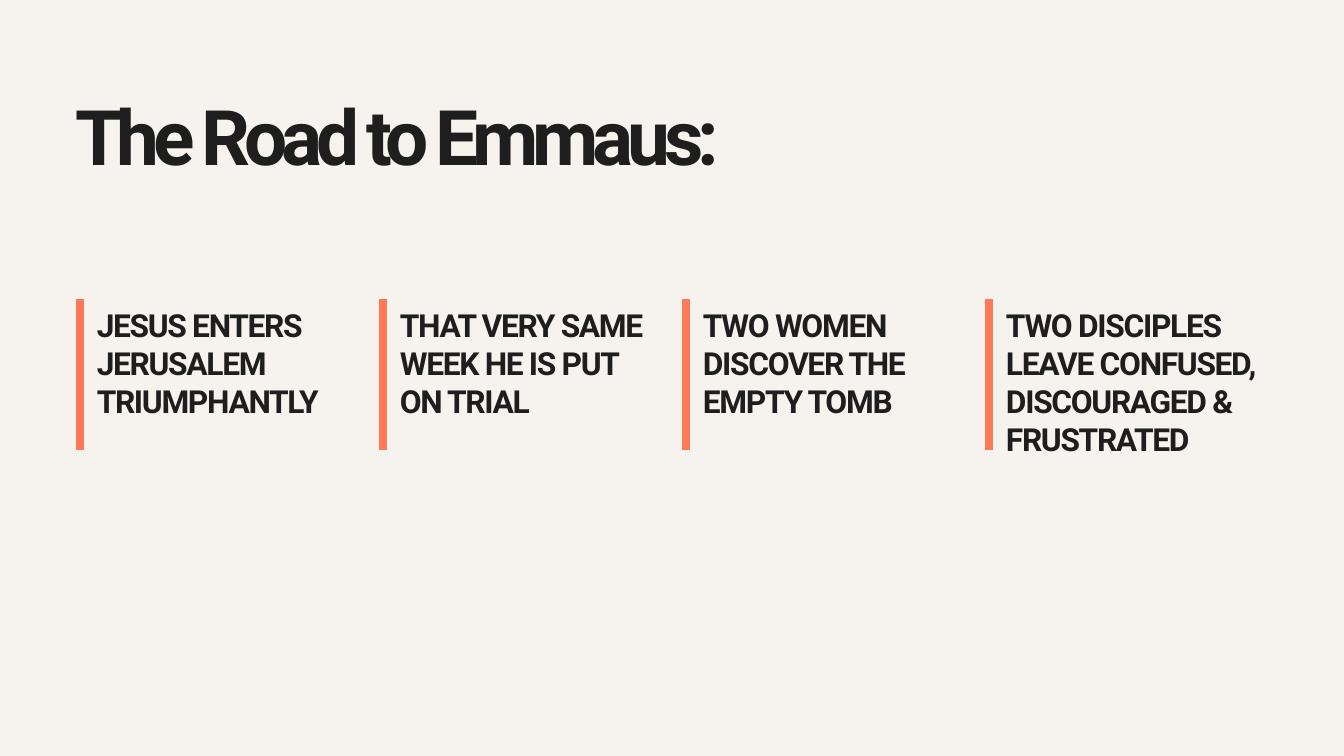
from lxml.etree import SubElement
from pptx import Presentation
from pptx.dml.color import RGBColor as RGB
from pptx.enum.shapes import MSO_CONNECTOR as Link
from pptx.enum.text import MSO_ANCHOR as Anchor, MSO_AUTO_SIZE as Fit, PP_ALIGN as Align
from pptx.oxml.ns import qn
from pptx.util import Inches, Pt

CREAM = RGB(0xF6, 0xF3, 0xEF)
CORAL = RGB(0xFE, 0x79, 0x58)
INK = RGB(0x1E, 0x1E, 0x1E)

LEFT, STEP = 1.19, 4.51
TOP, BASE = 4.45, 6.7
EVENTS = [
    "JESUS ENTERS JERUSALEM TRIUMPHANTLY",
    "THAT VERY SAME WEEK HE IS PUT ON TRIAL",
    "TWO WOMEN DISCOVER THE EMPTY TOMB",
    "TWO DISCIPLES LEAVE CONFUSED, DISCOURAGED & FRUSTRATED",
]


def write(shape, text, size, lead, track):
    """Fill a shape with bold text; lead and track are in points."""
    frame = shape.text_frame
    frame.word_wrap = True
    frame.auto_size = Fit.NONE
    frame.vertical_anchor = Anchor.TOP
    frame.margin_left = frame.margin_right = 0
    frame.margin_top = frame.margin_bottom = 0
    para = frame.paragraphs[0]
    para.alignment = Align.LEFT
    para.line_spacing = Pt(lead)
    run = para.add_run()
    run.text = text
    font = run.font
    font.name, font.size, font.bold = "Roboto", Pt(size), True
    font.color.rgb = INK
    run._r.get_or_add_rPr().set("spc", str(round(track * 100)))


def add_title(slide, text):
    title = slide.shapes.title
    title.left, title.top = Inches(1.12), Inches(1.44)
    title.width, title.height = Inches(14.69), Inches(1.29)
    write(title, text, size=82, lead=90.2, track=-6.5)


def add_bar(slide, x):
    bar = slide.shapes.add_connector(
        Link.STRAIGHT, Inches(x), Inches(BASE), Inches(x), Inches(TOP))
    bar.line.color.rgb = CORAL
    bar.line.width = Pt(9)
    SubElement(bar._element.spPr, qn("a:effectLst"))


def add_event(slide, x, text):
    box = slide.shapes.add_textbox(
        Inches(x + 0.25), Inches(TOP + 0.1), Inches(3.91), Inches(2.25))
    write(box, text, size=34, lead=40.8, track=-1.4)


def main():
    deck = Presentation()
    deck.slide_width, deck.slide_height = Inches(20), Inches(11.25)
    slide = deck.slides.add_slide(deck.slide_layouts[5])
    fill = slide.background.fill
    fill.solid()
    fill.fore_color.rgb = CREAM

    # Heading
    add_title(slide, "The Road to Emmaus:")

    # Four events, each beside a coral bar
    for i, text in enumerate(EVENTS):
        x = LEFT + i * STEP
        add_bar(slide, x)
        add_event(slide, x, text)

    deck.save("out.pptx")


if __name__ == "__main__":
    main()
